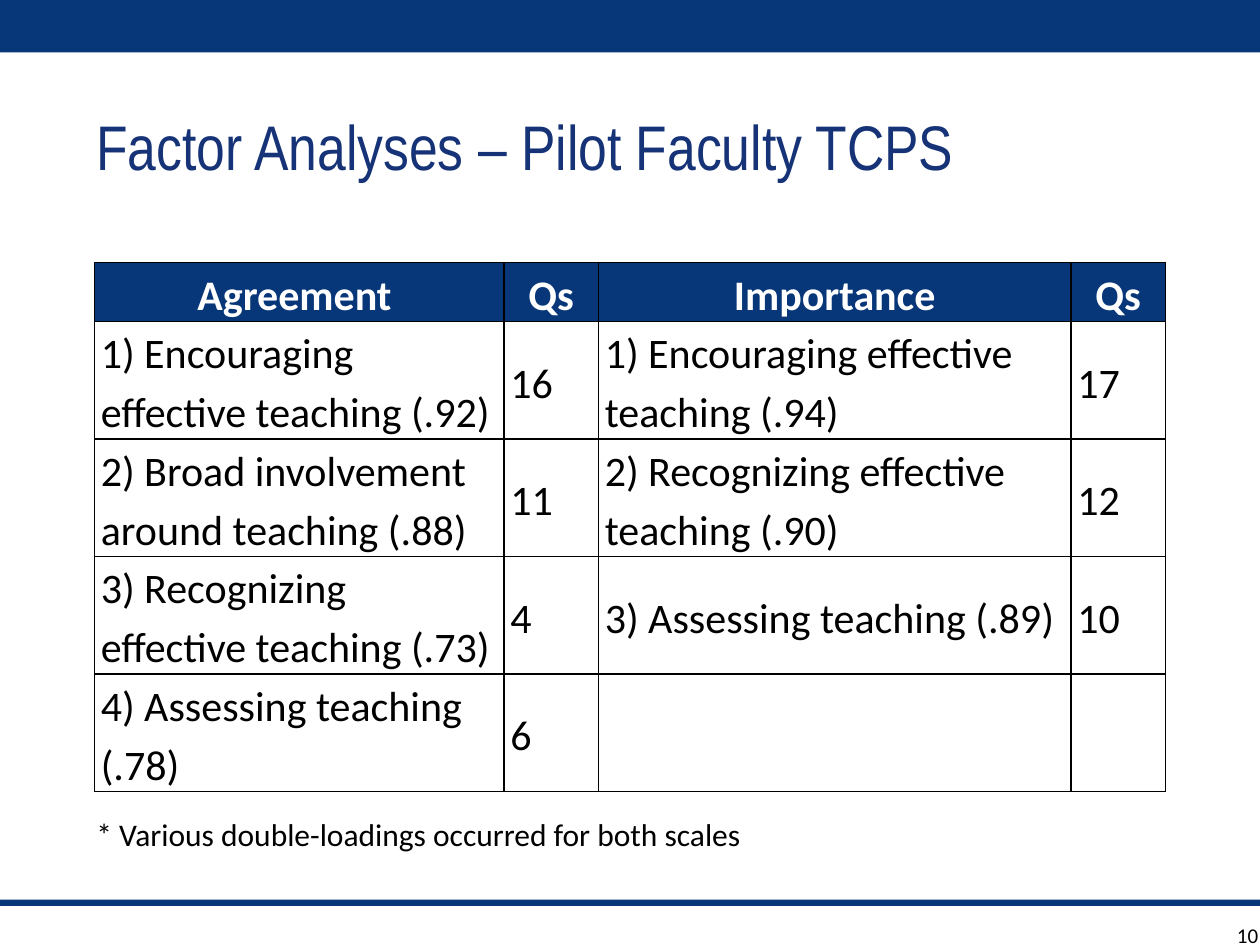
from dataclasses import dataclass

from lxml import etree
from pptx import Presentation
from pptx.dml.color import RGBColor
from pptx.enum import shapes, text
from pptx.oxml import ns
from pptx.util import Pt


@dataclass(frozen=True)
class Theme:
    navy: RGBColor = RGBColor(0x07, 0x37, 0x79)
    title: RGBColor = RGBColor(0x17, 0x33, 0x77)
    black: RGBColor = RGBColor(0, 0, 0)
    white: RGBColor = RGBColor(255, 255, 255)
    title_font: str = "Arial Narrow"
    body_font: str = "Calibri"
    title_size: int = 36
    table_size: int = 24
    note_size: int = 18
    number_size: int = 12


THEME = Theme()

HEADER = ["Agreement ", "Qs", "Importance", "Qs"]
FACTORS = [
    ["1) Encouraging effective teaching (.92)", "16", "1) Encouraging effective teaching (.94)", "17"],
    ["2) Broad involvement around teaching (.88)", "11", "2) Recognizing effective teaching (.90)", "12"],
    ["3) Recognizing effective teaching (.73)", "4", "3) Assessing teaching (.89)", "10"],
    ["4) Assessing teaching (.78)", "6", "", ""],
]
COLUMN_WIDTHS = [234, 54, 270, 54]
HEADER_HEIGHT = 33.6
ROW_HEIGHT = 67.2


def style_font(font, name, size, color, bold=False):
    font.name = name
    font.size = Pt(size)
    font.bold = bold
    font.color.rgb = color


def add_band(slide, top, height):
    band = slide.shapes.add_shape(shapes.MSO_SHAPE.RECTANGLE, 0, Pt(top), Pt(720), Pt(height))
    band.shadow.inherit = False
    band.fill.solid()
    band.fill.fore_color.rgb = THEME.navy
    band.line.fill.background()


def add_label(slide, words, box, font_name, size, color,
              align=text.PP_ALIGN.LEFT, anchor=text.MSO_ANCHOR.TOP):
    frame = slide.shapes.add_textbox(*map(Pt, box)).text_frame
    frame.word_wrap = True
    frame.vertical_anchor = anchor
    paragraph = frame.paragraphs[0]
    paragraph.text = words
    paragraph.alignment = align
    style_font(paragraph.font, font_name, size, color)


def add_borders(cell):
    properties = cell._tc.get_or_add_tcPr()
    for position, side in enumerate(("lnL", "lnR", "lnT", "lnB")):
        line = etree.Element(ns.qn(f"a:{side}"), w=str(Pt(1)))
        fill = etree.SubElement(line, ns.qn("a:solidFill"))
        etree.SubElement(fill, ns.qn("a:srgbClr"), val=str(THEME.black))
        properties.insert(position, line)


def fill_cell(cell, words, is_header):
    cell.margin_left = cell.margin_right = Pt(3.6)
    cell.margin_top = cell.margin_bottom = 0
    paragraph = cell.text_frame.paragraphs[0]
    paragraph.text = words
    paragraph.line_spacing = 1.15
    if is_header:
        cell.fill.solid()
        cell.fill.fore_color.rgb = THEME.navy
        paragraph.alignment = text.PP_ALIGN.CENTER
    else:
        cell.fill.background()
        cell.vertical_anchor = text.MSO_ANCHOR.MIDDLE
    color = THEME.white if is_header else THEME.black
    style_font(paragraph.font, THEME.body_font, THEME.table_size, color, is_header)
    add_borders(cell)


def add_factor_table(slide, left, top):
    rows = [HEADER, *FACTORS]
    heights = [HEADER_HEIGHT] + [ROW_HEIGHT] * len(FACTORS)
    table = slide.shapes.add_table(len(rows), len(HEADER), Pt(left), Pt(top),
                                   Pt(sum(COLUMN_WIDTHS)), Pt(sum(heights))).table
    for column, width in zip(table.columns, COLUMN_WIDTHS):
        column.width = Pt(width)
    for index, (row, height, entries) in enumerate(zip(table.rows, heights, rows)):
        row.height = Pt(height)
        for cell, words in zip(row.cells, entries):
            fill_cell(cell, words, index == 0)


def main():
    presentation = Presentation()
    presentation.slide_width, presentation.slide_height = Pt(720), Pt(540)
    slide = presentation.slides.add_slide(presentation.slide_layouts[6])
    add_band(slide, 0, 30)
    add_band(slide, 514, 3.6)
    add_label(slide, "Factor Analyses – Pilot Faculty TCPS", (48, 30, 684, 78),
              THEME.title_font, THEME.title_size, THEME.title, anchor=text.MSO_ANCHOR.BOTTOM)
    add_label(slide, "10", (666, 523.5, 60, 29), THEME.body_font, THEME.number_size,
              THEME.black, align=text.PP_ALIGN.RIGHT)
    add_factor_table(slide, 54, 150)
    add_label(slide, "* Various double-loadings occurred for both scales", (48, 462, 624, 29),
              THEME.body_font, THEME.note_size, THEME.black)
    presentation.save("out.pptx")


if __name__ == "__main__":
    main()
